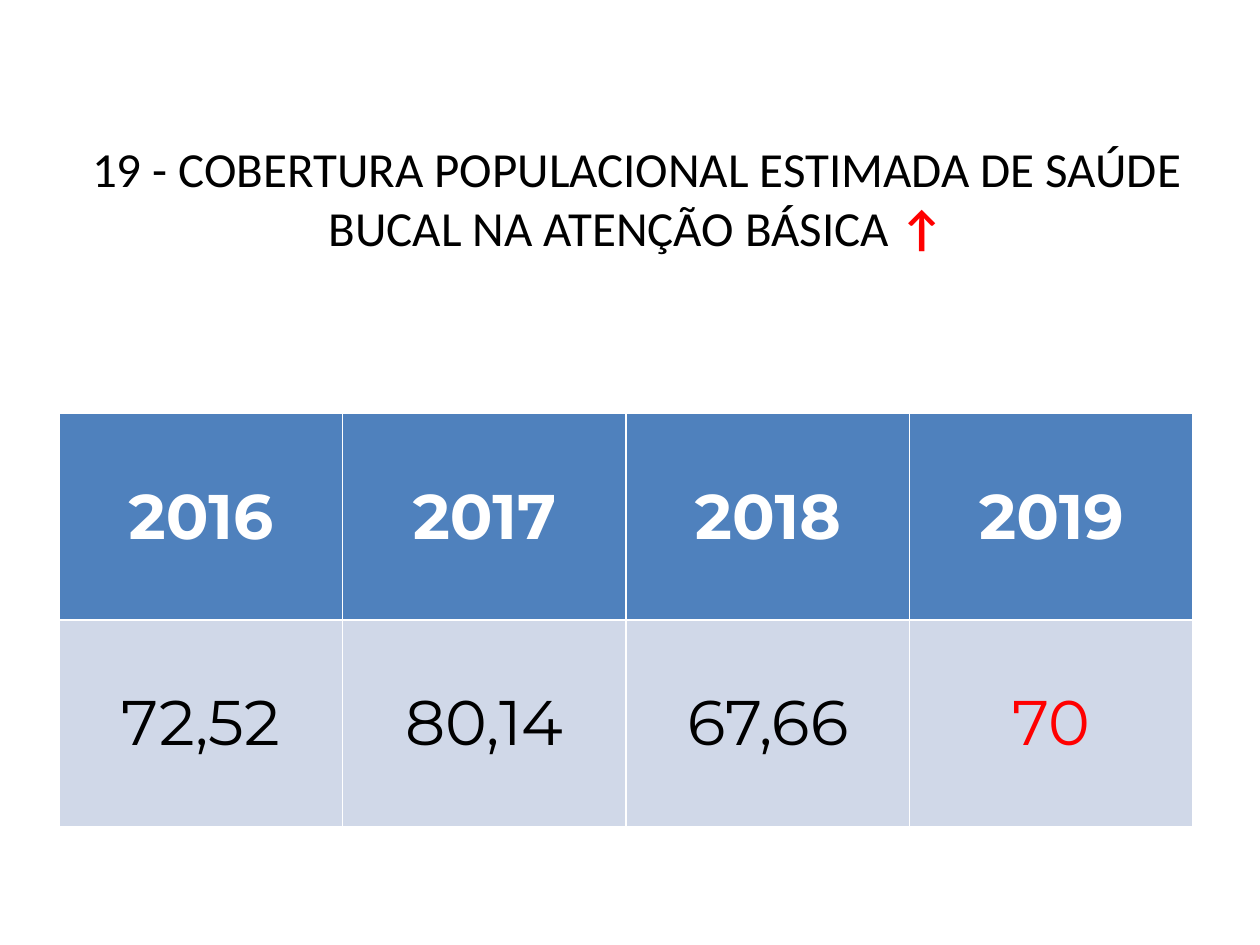
from pptx import Presentation
from pptx.dml.color import RGBColor
from pptx.enum import text
from pptx.util import Inches, Pt

YEARS = ["2016", "2017", "2018", "2019"]
COVERAGE = ["72,52", "80,14", "67,66", "70"]
BLACK, WHITE, RED = "000000", "FFFFFF", "FF0000"
HEADER_FILL, VALUE_FILL = "4F81BD", "D0D8E8"


def color(value):
    return RGBColor.from_string(value)


def add_run(paragraph, content, font_name, size, font_color, bold=False):
    run = paragraph.add_run()
    run.text = content
    run.font.name = font_name
    run.font.size = Pt(size)
    run.font.bold = bold
    run.font.color.rgb = color(font_color)


def place_title(slide, left, top, width, height):
    title = slide.shapes.title
    title.left, title.top = Inches(left), Inches(top)
    title.width, title.height = Inches(width), Inches(height)
    frame = title.text_frame
    frame.word_wrap = True
    frame.vertical_anchor = text.MSO_ANCHOR.MIDDLE
    paragraph = frame.paragraphs[0]
    paragraph.alignment = text.PP_ALIGN.CENTER
    add_run(
        paragraph,
        "19 - COBERTURA POPULACIONAL ESTIMADA DE SAÚDE BUCAL NA ATENÇÃO BÁSICA ",
        "Calibri", 28, BLACK,
    )
    add_run(paragraph, "↑", "Calibri", 28, RED, bold=True)


def fill_cell(cell, content, fill, font_color, bold):
    cell.fill.solid()
    cell.fill.fore_color.rgb = color(fill)
    cell.vertical_anchor = text.MSO_ANCHOR.MIDDLE
    paragraph = cell.text_frame.paragraphs[0]
    paragraph.alignment = text.PP_ALIGN.CENTER
    add_run(paragraph, content, "Montserrat", 36, font_color, bold)


def place_coverage_table(slide, left, top, width, height):
    table = slide.shapes.add_table(
        2, len(YEARS), Inches(left), Inches(top), Inches(width), Inches(height)
    ).table
    for column, (year, coverage) in enumerate(zip(YEARS, COVERAGE)):
        value_color = RED if year == "2019" else BLACK
        fill_cell(table.cell(0, column), year, HEADER_FILL, WHITE, True)
        fill_cell(table.cell(1, column), coverage, VALUE_FILL, value_color, False)


def main():
    presentation = Presentation()
    presentation.slide_width = Inches(10)
    presentation.slide_height = Inches(7.5)
    slide = presentation.slides.add_slide(presentation.slide_layouts[5])
    slide.background.fill.solid()
    slide.background.fill.fore_color.rgb = color(WHITE)
    place_title(slide, 0.55, 0.16, 9, 2.81)
    place_coverage_table(slide, 0.47, 3.28, 9, 3.28)
    presentation.save("out.pptx")


if __name__ == "__main__":
    main()
